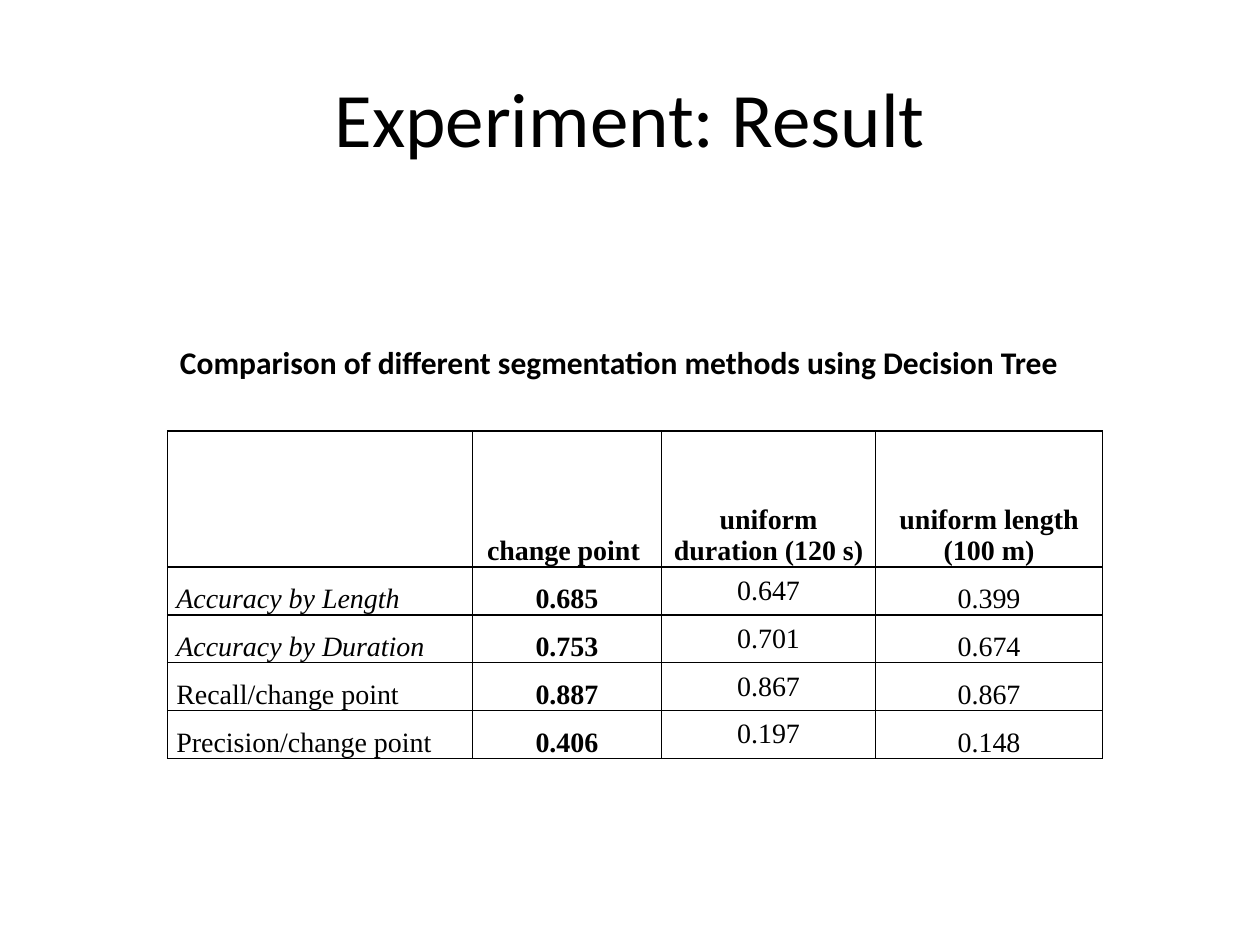
from dataclasses import dataclass

from lxml.etree import SubElement
from pptx import Presentation
from pptx.dml.color import RGBColor
from pptx.enum.text import MSO_ANCHOR as Anchor, PP_ALIGN as Align
from pptx.oxml.ns import qn
from pptx.slide import Slide
from pptx.table import _Cell as Cell
from pptx.text.text import TextFrame
from pptx.util import Inches, Pt

BLACK = "000000"
LEFT, WIDTH = 1.33, 7.42
COLUMN_WIDTHS = [2.42, 1.5, 1.7, 1.8]
HEADER_HEIGHT, ROW_HEIGHT = 1.08, 0.38
HEADERS = ["", "change point ", "uniform duration (120 s)", "uniform length (100 m)"]


@dataclass
class Measure:
    label: str
    scores: tuple[str, str, str]
    italic: bool = False


@dataclass
class Style:
    size: float
    font: str
    bold: bool = False
    italic: bool = False
    align: Align = Align.LEFT
    space_after: float = 0


MEASURES = [
    Measure("Accuracy by Length", ("0.685", "0.647", "0.399"), italic=True),
    Measure("Accuracy by Duration", ("0.753", "0.701", "0.674"), italic=True),
    Measure("Recall/change point", ("0.887", "0.867", "0.867")),
    Measure("Precision/change point", ("0.406", "0.197", "0.148")),
]


def color(hex_code: str) -> RGBColor:
    return RGBColor.from_string(hex_code)


def write(frame: TextFrame, text: str, style: Style) -> None:
    paragraph = frame.paragraphs[0]
    paragraph.alignment = style.align
    paragraph.space_after = Pt(style.space_after)
    run = paragraph.add_run()
    run.text = text
    run.font.size = Pt(style.size)
    run.font.name = style.font
    run.font.bold = style.bold
    run.font.italic = style.italic
    run.font.color.rgb = color(BLACK)


def add_text(slide: Slide, box: tuple[float, float, float, float], text: str,
             style: Style, anchor: Anchor = Anchor.TOP) -> None:
    frame = slide.shapes.add_textbox(*map(Inches, box)).text_frame
    frame.word_wrap = True
    frame.vertical_anchor = anchor
    write(frame, text, style)


def add_borders(cell: Cell) -> None:
    properties = cell._tc.get_or_add_tcPr()
    for side in ("lnL", "lnR", "lnT", "lnB"):
        line = SubElement(properties, qn(f"a:{side}"), w=str(Pt(1)))
        SubElement(SubElement(line, qn("a:solidFill")), qn("a:srgbClr"), val=BLACK)


def fill_cell(cell: Cell, text: str, style: Style, anchor: Anchor) -> None:
    add_borders(cell)
    cell.fill.background()
    cell.margin_left = cell.margin_right = Inches(0.07)
    cell.margin_top = cell.margin_bottom = 0
    cell.vertical_anchor = anchor
    if text:
        write(cell.text_frame, text, style)


def add_results(slide: Slide) -> None:
    height = HEADER_HEIGHT + ROW_HEIGHT * len(MEASURES)
    table = slide.shapes.add_table(
        len(MEASURES) + 1, len(HEADERS),
        Inches(LEFT), Inches(3.42), Inches(WIDTH), Inches(height)).table
    table.first_row = table.horz_banding = False
    for column, width in zip(table.columns, COLUMN_WIDTHS):
        column.width = Inches(width)
    for index, row in enumerate(table.rows):
        row.height = Inches(ROW_HEIGHT if index else HEADER_HEIGHT)

    rows = [HEADERS] + [[m.label, *m.scores] for m in MEASURES]
    for r, texts in enumerate(rows):
        for c, text in enumerate(texts):
            style = Style(
                16, "Times New Roman",
                bold=r == 0 or c == 1,
                italic=r > 0 and c == 0 and MEASURES[r - 1].italic,
                align=Align.CENTER if c else Align.JUSTIFY,
                space_after=4)
            anchor = Anchor.MIDDLE if r and c == 2 else Anchor.BOTTOM
            fill_cell(table.cell(r, c), text, style, anchor)


def main() -> None:
    deck = Presentation()
    deck.slide_width, deck.slide_height = Inches(10), Inches(7.5)
    slide = deck.slides.add_slide(deck.slide_layouts[6])
    add_text(slide, (0.5, 0.3, 9, 1.25), "Experiment: Result",
             Style(44, "Calibri", align=Align.CENTER), Anchor.MIDDLE)
    add_results(slide)
    add_text(slide, (LEFT, 2.67, WIDTH, 0.4),
             "Comparison of different segmentation methods using Decision Tree",
             Style(18, "Calibri", bold=True))
    deck.save("out.pptx")


if __name__ == "__main__":
    main()
